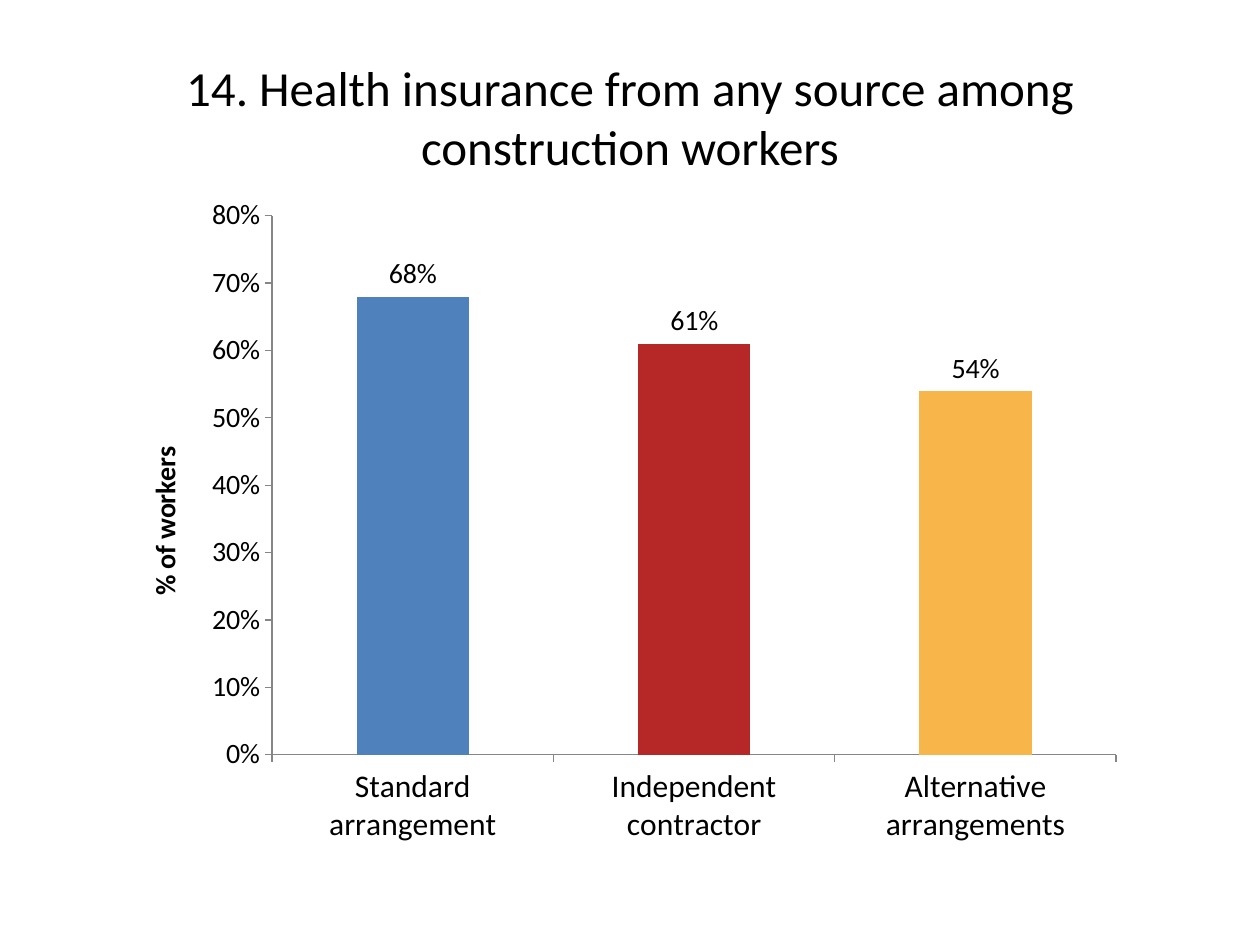
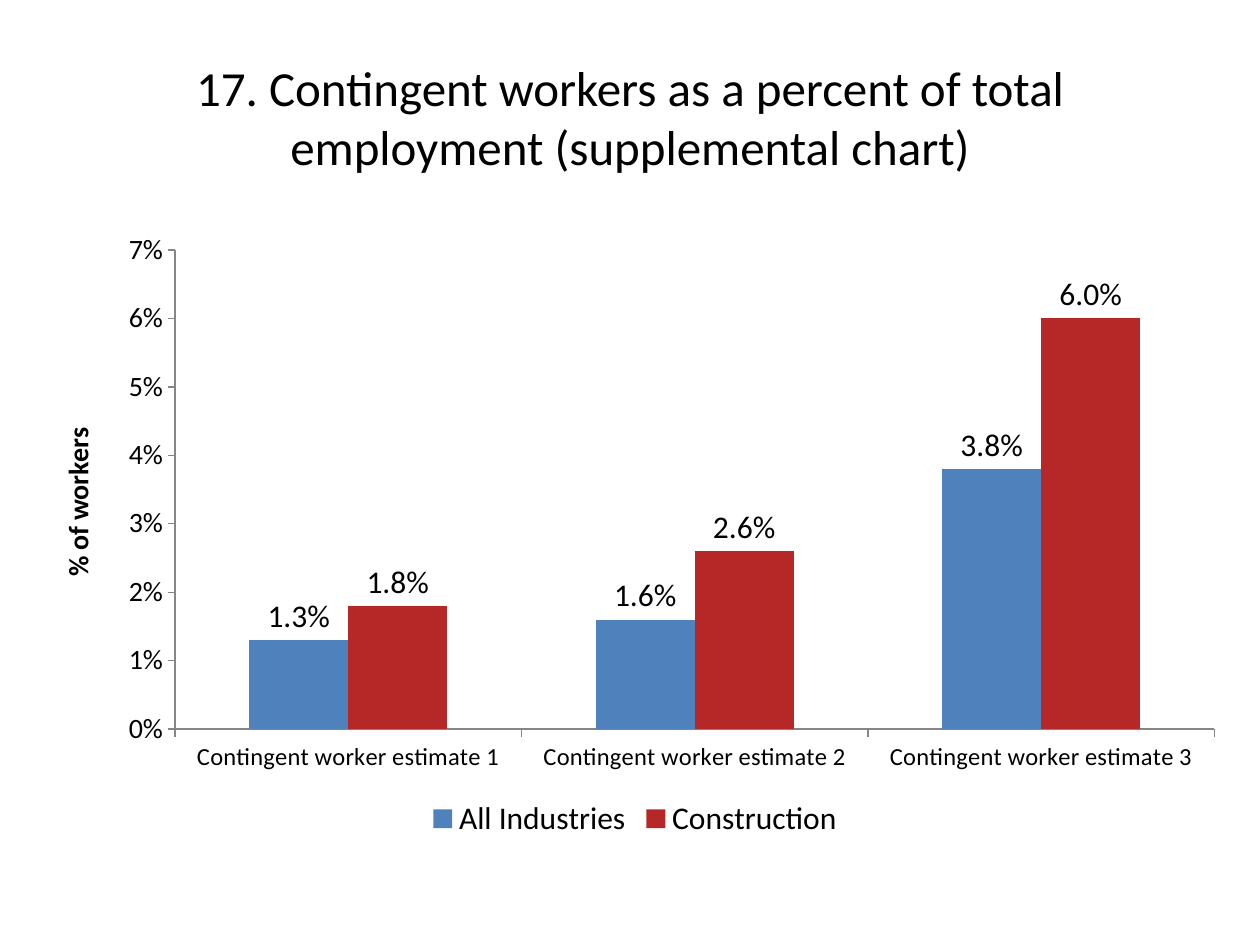
from pptx import Presentation
from pptx.chart.data import CategoryChartData
from pptx.dml.color import RGBColor
from pptx.enum.chart import XL_CHART_TYPE as ChartType
from pptx.enum.chart import XL_LABEL_POSITION as LabelPosition
from pptx.enum.chart import XL_LEGEND_POSITION as LegendPosition
from pptx.enum.chart import XL_TICK_MARK as TickMark
from pptx.enum.text import MSO_ANCHOR as Anchor
from pptx.enum.text import PP_ALIGN as Align
from pptx.util import Inches, Pt

COLUMNS, ROWS = 100, 75
BLUE, RED, AMBER = "4F81BD", "B62828", "F8B64A"
WHOLE_PERCENT = '#,##0"%"'
TENTH_PERCENT = '#,##0.0"%"'


def color(hex_string):
    return RGBColor.from_string(hex_string)


def paint(target, hex_string):
    target.format.fill.solid()
    target.format.fill.fore_color.rgb = color(hex_string)


class ChartDeck:
    """Holds the shared style and the slide being built."""

    font_name = "Calibri"
    text_color = "000000"
    axis_color = "868686"
    title_size = 28
    chart_size = 18
    axis_size = 16
    title_box = (5, 3, 90, 12.5)

    def __init__(self):
        self.presentation = Presentation()
        self.presentation.slide_width = Inches(10)
        self.presentation.slide_height = Inches(7.5)
        self.slide = None

    def place(self, left, top, width, height):
        """Turn grid columns and rows into slide lengths."""
        column = self.presentation.slide_width / COLUMNS
        row = self.presentation.slide_height / ROWS
        return (int(left * column), int(top * row),
                int(width * column), int(height * row))

    def style_font(self, font, size, bold=False):
        font.name = self.font_name
        font.size = Pt(size)
        font.bold = bold
        font.color.rgb = color(self.text_color)

    def add_slide(self, title):
        self.slide = self.presentation.slides.add_slide(
            self.presentation.slide_layouts[6])
        text_frame = self.slide.shapes.add_textbox(
            *self.place(*self.title_box)).text_frame
        text_frame.word_wrap = True
        text_frame.vertical_anchor = Anchor.MIDDLE
        text_frame.text = title
        paragraph = text_frame.paragraphs[0]
        paragraph.alignment = Align.CENTER
        self.style_font(paragraph.runs[0].font, self.title_size)

    def style_axis(self, axis, size):
        axis.has_major_gridlines = False
        axis.major_tick_mark = TickMark.OUTSIDE
        axis.minor_tick_mark = TickMark.NONE
        axis.format.line.color.rgb = color(self.axis_color)
        axis.format.line.width = Pt(0.75)
        self.style_font(axis.tick_labels.font, size)

    def style_value_axis(self, axis, maximum, step):
        self.style_axis(axis, self.axis_size)
        axis.minimum_scale = 0
        axis.maximum_scale = maximum
        axis.major_unit = step
        axis.tick_labels.number_format = WHOLE_PERCENT
        axis.tick_labels.number_format_is_linked = False
        text_frame = axis.axis_title.text_frame
        text_frame.text = "% of workers"
        self.style_font(text_frame.paragraphs[0].runs[0].font,
                        self.axis_size, bold=True)

    def add_labels(self, series, number_format, size):
        labels = series.data_labels
        labels.show_value = True
        labels.number_format = number_format
        labels.number_format_is_linked = False
        labels.position = LabelPosition.OUTSIDE_END
        self.style_font(labels.font, size)

    def add_legend(self, chart):
        chart.has_legend = True
        chart.legend.position = LegendPosition.BOTTOM
        chart.legend.include_in_layout = False
        self.style_font(chart.legend.font, self.chart_size)

    def add_column_chart(self, box, categories, series_values, series_colors,
                         maximum, step, label_format,
                         label_size=chart_size, category_size=chart_size):
        data = CategoryChartData(number_format=label_format)
        data.categories = categories
        for name, values in series_values.items():
            data.add_series(name, values)
        chart = self.slide.shapes.add_chart(
            ChartType.COLUMN_CLUSTERED, *self.place(*box), data).chart
        chart.has_title = False
        chart.has_legend = False
        self.style_font(chart.font, self.chart_size)
        self.style_axis(chart.category_axis, category_size)
        self.style_value_axis(chart.value_axis, maximum, step)

        plot = chart.plots[0]
        plot.gap_width = 150
        plot.overlap = 0
        plot.vary_by_categories = False
        for series, fill in zip(plot.series, series_colors):
            paint(series, fill)
            series.invert_if_negative = False
            self.add_labels(series, label_format, label_size)
        return chart


def add_insurance_slide(deck):
    deck.add_slide(
        "14. Health insurance from any source among construction workers")
    chart = deck.add_column_chart(
        box=(9.4, 14.7, 80.8, 53.3),
        categories=["Standard arrangement", "Independent contractor",
                    "Alternative arrangements"],
        series_values={"Series 1": (68, 61, 54)},
        series_colors=[BLUE],
        maximum=80, step=10,
        label_format=WHOLE_PERCENT, label_size=16)
    arrangements = chart.plots[0].series[0]
    for index, fill in enumerate((RED, AMBER), start=1):
        paint(arrangements.points[index], fill)


def add_contingent_slide(deck):
    deck.add_slide("17. Contingent workers as a percent of total "
                   "employment (supplemental chart)")
    chart = deck.add_column_chart(
        box=(2.5, 17.5, 95.8, 49.5),
        categories=[f"Contingent worker estimate {number}"
                    for number in (1, 2, 3)],
        series_values={"All Industries": (1.3, 1.6, 3.8),
                       "Construction": (1.8, 2.6, 6)},
        series_colors=[BLUE, RED],
        maximum=7, step=1,
        label_format=TENTH_PERCENT, category_size=14)
    deck.add_legend(chart)


def main():
    deck = ChartDeck()
    add_insurance_slide(deck)
    add_contingent_slide(deck)
    deck.presentation.save("out.pptx")


if __name__ == "__main__":
    main()
